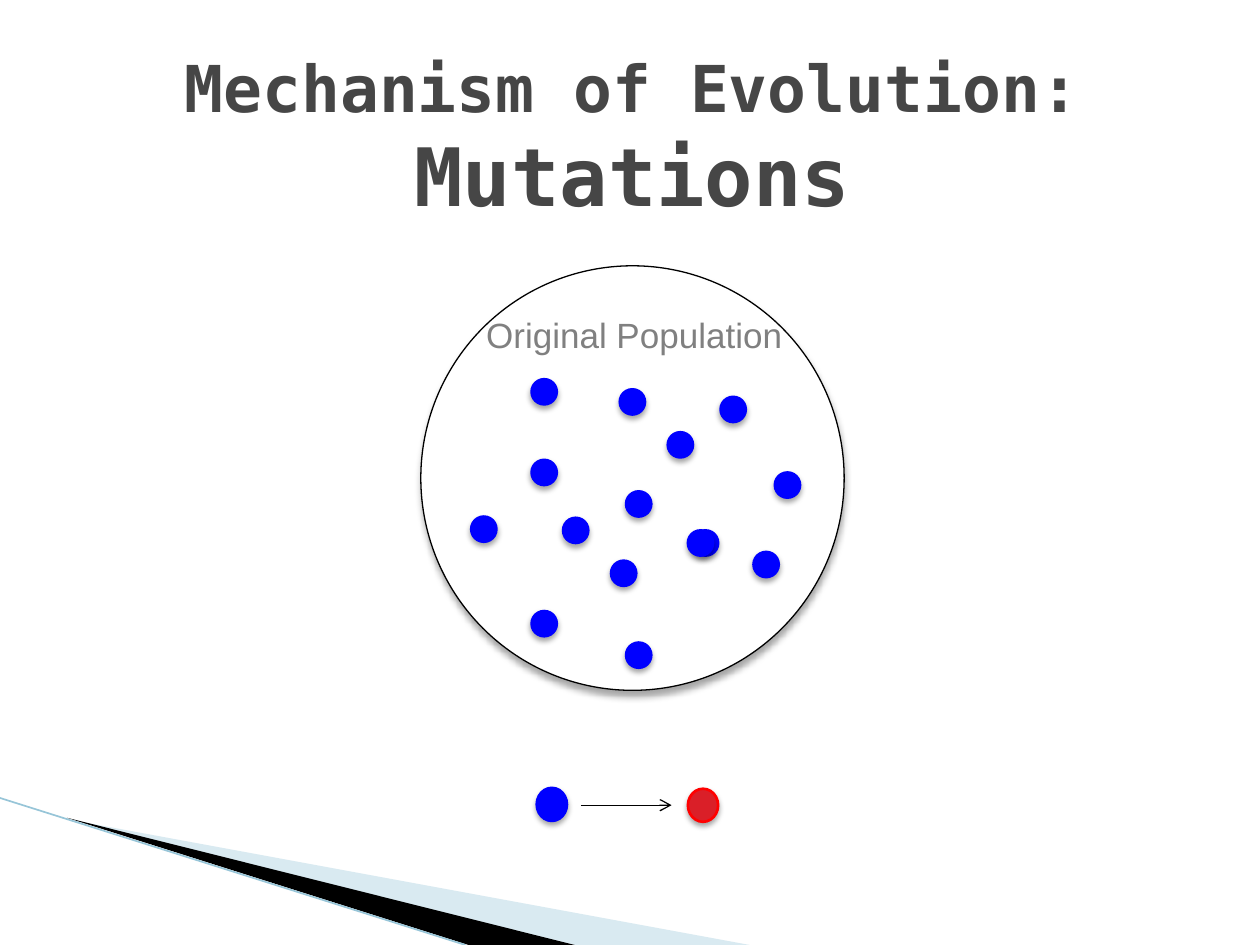
from lxml import etree
from pptx import Presentation
from pptx.dml.color import RGBColor
from pptx.enum.shapes import MSO_CONNECTOR, MSO_SHAPE
from pptx.enum.text import MSO_ANCHOR, MSO_AUTO_SIZE, PP_ALIGN
from pptx.oxml.ns import qn
from pptx.util import Pt

OVAL = MSO_SHAPE.OVAL
STRAIGHT = MSO_CONNECTOR.STRAIGHT
MIDDLE, TOP = MSO_ANCHOR.MIDDLE, MSO_ANCHOR.TOP
CENTER = PP_ALIGN.CENTER
NO_AUTOFIT = MSO_AUTO_SIZE.NONE

THEME = {
    "title_font": "DejaVu Sans Mono", "label_font": "Arial",
    "title_size": 36.9, "emphasis_size": 46, "label_size": 20,
    "title": "464646", "label": "808080",
    "black": "000000", "white": "FFFFFF",
    "blue": "0000FF", "red": "DA1F28", "red_edge": "FF0000",
    "pale": "A0CBDC", "edge": "97C5D8",
}

# All lengths are in points.
TITLE = [("Mechanism of Evolution: ", "title_size"), ("Mutations", "emphasis_size")]
TITLE_BOX = (69.1, 32.4, 584.6, 90)
LABEL = "Original Population"
LABEL_BOX = (266.4, 172.1, 192.2, 36)
POPULATION = (240.5, 151.9, 241.9, 242.6)

INDIVIDUAL_SIZE = 14.4
INDIVIDUALS = [
    (354.2, 222.5), (381.6, 247), (357.8, 280.8), (396, 303.1), (303.8, 216.7),
    (303.8, 262.8), (321.8, 295.9), (349.2, 320.4), (411.8, 226.8), (393.1, 303.1),
    (430.6, 315.4), (442.8, 270), (357.8, 367.2), (303.8, 349.2), (269.3, 295.2),
]
BEFORE_MUTATION = (306.7, 450.2, 17.3, 18.9)
AFTER_MUTATION = (393.1, 450.7, 17.3, 18.9)
MUTATION_ARROW = (331.9, 460.1, 383.8, 460.1)

# Corner decoration: points, colour, opacity in percent
WEDGES = [
    ([(39.6, 468.4), (428.4, 540), (328.3, 540)], "pale", 40),
    ([(38.2, 467.3), (328.5, 540), (267.8, 540)], "black", 100),
]
CORNER_EDGE = (0, 456, 266, 540)


def color(name):
    return RGBColor.from_string(THEME[name])


def points(values):
    return [Pt(value) for value in values]


def add_shadow(shape, blur, distance):
    shape.shadow.inherit = False
    effects = shape._element.spPr.find(qn("a:effectLst"))
    shadow = etree.SubElement(
        effects, qn("a:outerShdw"), blurRad=str(Pt(blur)), dist=str(Pt(distance)),
        dir="5400000", rotWithShape="0")
    shade = etree.SubElement(shadow, qn("a:srgbClr"), val=THEME["black"])
    etree.SubElement(shade, qn("a:alpha"), val="35000")


def add_oval(slide, box, fill, line, width=1.5, blur=3, distance=2):
    oval = slide.shapes.add_shape(OVAL, *points(box))
    oval.fill.solid()
    oval.fill.fore_color.rgb = color(fill)
    oval.line.color.rgb = color(line)
    oval.line.width = Pt(width)
    add_shadow(oval, blur, distance)


def add_line(slide, ends, line_color, width):
    line = slide.shapes.add_connector(STRAIGHT, *points(ends))
    line.line.color.rgb = color(line_color)
    line.line.width = Pt(width)
    etree.SubElement(line._element.spPr, qn("a:effectLst"))
    return line


def add_wedge(slide, corners, fill, opacity):
    start, *rest = [points(corner) for corner in corners]
    builder = slide.shapes.build_freeform(*start)
    builder.add_line_segments(rest, close=True)
    wedge = builder.convert_to_shape()
    wedge.shadow.inherit = False
    wedge.line.fill.background()
    wedge.fill.solid()
    wedge.fill.fore_color.rgb = color(fill)
    if opacity < 100:
        shade = wedge._element.spPr.find(qn("a:solidFill"))[0]
        etree.SubElement(shade, qn("a:alpha"), val=str(opacity * 1000))


def write_text(shape, spans, font, text_color, anchor, bold=False):
    """Fill the shape with one centred paragraph of (text, size name) spans."""
    frame = shape.text_frame
    frame.word_wrap = True
    frame.auto_size = NO_AUTOFIT
    frame.vertical_anchor = anchor
    para = frame.paragraphs[0]
    para.alignment = CENTER
    for text, size in spans:
        span = para.add_run()
        span.text = text
        span.font.name = THEME[font]
        span.font.size = Pt(THEME[size])
        span.font.bold = bold
        span.font.color.rgb = color(text_color)
    return frame


def main():
    deck = Presentation()
    deck.slide_width, deck.slide_height = Pt(720), Pt(540)
    slide = deck.slides.add_slide(deck.slide_layouts[5])
    slide.background.fill.solid()
    slide.background.fill.fore_color.rgb = color("white")

    for wedge in WEDGES:
        add_wedge(slide, *wedge)
    add_line(slide, CORNER_EDGE, "edge", 0.95)

    title = slide.shapes.title
    title.left, title.top, title.width, title.height = points(TITLE_BOX)
    write_text(title, TITLE, "title_font", "title", MIDDLE, bold=True)

    add_oval(slide, POPULATION, "white", "black", width=0.75, blur=4, distance=3)
    for left, top in INDIVIDUALS:
        add_oval(slide, (left, top, INDIVIDUAL_SIZE, INDIVIDUAL_SIZE), "blue", "blue")

    add_oval(slide, BEFORE_MUTATION, "blue", "blue")
    arrow = add_line(slide, MUTATION_ARROW, "black", 0.75)
    etree.SubElement(arrow.line._get_or_add_ln(), qn("a:tailEnd"), type="arrow")
    add_oval(slide, AFTER_MUTATION, "red", "red_edge")

    label = slide.shapes.add_textbox(*points(LABEL_BOX))
    frame = write_text(label, [(LABEL, "label_size")], "label_font", "label", TOP)
    frame.margin_left = frame.margin_right = Pt(7.2)
    frame.margin_top = frame.margin_bottom = Pt(7.2)

    deck.save("out.pptx")


if __name__ == "__main__":
    main()
